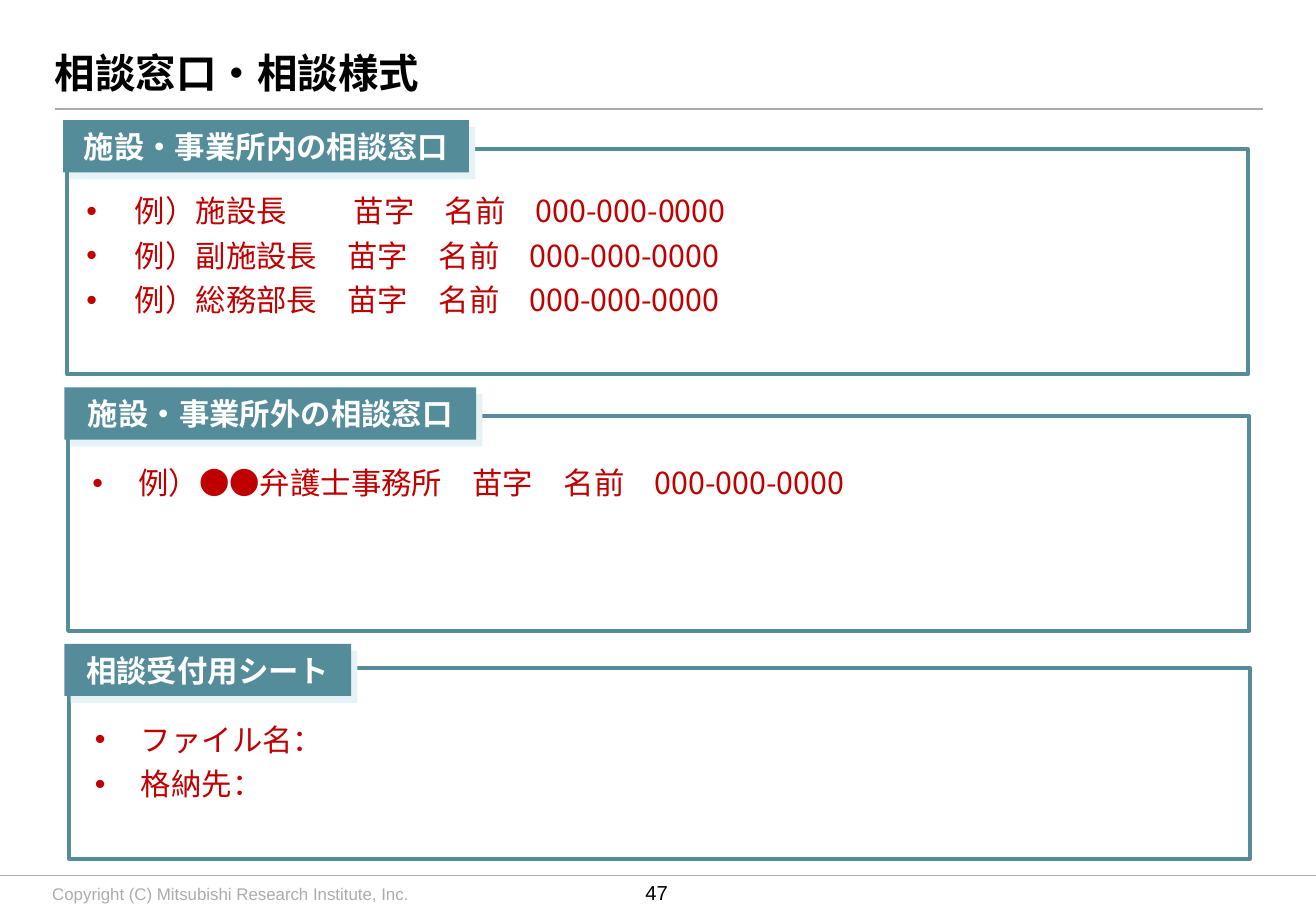
"""Build the slide of consultation contacts and forms."""
import pptx
import pptx.dml.color
import pptx.enum.shapes
import pptx.enum.text
import pptx.oxml.ns
import pptx.util
from lxml import etree

WIDTH, HEIGHT = pptx.util.Inches(10.83), pptx.util.Inches(7.5)
TEAL, PALE, RED, GREY, WHITE, BLACK = "558C99", "E5F3F6", "C00000", "ACACAC", "FFFFFF", "000000"
JAPANESE, LATIN = "Noto Sans CJK JP", "Arial"

TITLE = "相談窓口・相談様式"
COPYRIGHT = "Copyright (C) Mitsubishi Research Institute, Inc."
PAGE = "47"
RULES = [(0, 96.13, 100, 0.75), (4.16, 12, 95.94, 1)]
LABEL_HEIGHT = 5.73
SHADOW_SHIFT = (0.48, 0.75)
NAME_TAB = 2.2

SECTIONS = [
    {"heading": "施設・事業所内の相談窓口",
     "label": (4.8, 13.2, 30.84), "frame": (5.08, 16.4, 89.75, 24.67),
     "list": (6.56, 20.67, 49.58, 14), "hang": 0.4,
     "entries": ["例）施設長\t苗字　名前　000-000-0000",
                 "例）副施設長　苗字　名前　000-000-0000",
                 "例）総務部長　苗字　名前　000-000-0000"]},
    {"heading": "施設・事業所外の相談窓口",
     "label": (4.89, 42.53, 31.3), "frame": (5.17, 45.67, 89.75, 23.6),
     "list": (6.83, 50.53, 79.22, 4), "hang": 0.38,
     "entries": ["例）●●弁護士事務所　苗字　名前　000-000-0000"]},
    {"heading": "相談受付用シート",
     "label": (4.89, 70.67, 21.79), "frame": (5.26, 73.33, 89.75, 20.93),
     "list": (7.02, 78.67, 49.58, 9.07), "hang": 0.38,
     "entries": ["ファイル名：", "格納先："]},
]


def rgb(value):
    """Return a colour from its hex string."""
    return pptx.dml.color.RGBColor.from_string(value)


def place(left, top, width, height):
    """Turn percentages of the slide into lengths."""
    return (round(WIDTH * left / 100), round(HEIGHT * top / 100),
            round(WIDTH * width / 100), round(HEIGHT * height / 100))


def child(parent, tag, **attributes):
    """Append a drawing element to a parent."""
    return etree.SubElement(parent, pptx.oxml.ns.qn(tag), attributes)


def style(paragraph, size, colour, font=JAPANESE, bold=False):
    """Format every run of a paragraph."""
    for run in paragraph.runs:
        run.font.size = pptx.util.Pt(size)
        run.font.bold = bold
        run.font.name = font
        run.font.color.rgb = rgb(colour)
        child(run.font._element, "a:ea", typeface=font)


def prepare(frame, insets=(0, 0, 0, 0), middle=True):
    """Set the wrapping, margins and anchor of a text frame."""
    frame.word_wrap = True
    margins = [pptx.util.Inches(inset) for inset in insets]
    frame.margin_left, frame.margin_top, frame.margin_right, frame.margin_bottom = margins
    anchors = pptx.enum.text.MSO_ANCHOR
    frame.vertical_anchor = anchors.MIDDLE if middle else anchors.TOP


def add_rectangle(shapes, box, fill, outline=None):
    """Add a flat rectangle with an optional outline."""
    rectangle = shapes.add_shape(pptx.enum.shapes.MSO_SHAPE.RECTANGLE, *place(*box))
    rectangle.shadow.inherit = False
    rectangle.fill.solid()
    rectangle.fill.fore_color.rgb = rgb(fill)
    if outline:
        rectangle.line.color.rgb = rgb(outline)
        rectangle.line.width = pptx.util.Pt(2.25)
    else:
        rectangle.line.fill.background()
    return rectangle


def add_line_of_text(slide, text, box, size, colour, font, bold=False,
                     insets=(0, 0, 0, 0), centred=False):
    """Add a single line of text centred vertically in its box."""
    frame = slide.shapes.add_textbox(*place(*box)).text_frame
    prepare(frame, insets)
    frame.text = text
    if centred:
        frame.paragraphs[0].alignment = pptx.enum.text.PP_ALIGN.CENTER
    style(frame.paragraphs[0], size, colour, font, bold)


def add_rule(slide, left, top, right, weight):
    """Add a thin horizontal rule."""
    x, y, end, _ = place(left, top, right, 0)
    rule = slide.shapes.add_connector(pptx.enum.shapes.MSO_CONNECTOR.STRAIGHT, x, y, end, y)
    rule.line.color.rgb = rgb(GREY)
    rule.line.width = pptx.util.Pt(weight)
    child(rule._element.spPr, "a:effectLst")


def add_entries(slide, section):
    """Add the bulleted entries of a section."""
    frame = slide.shapes.add_textbox(*place(*section["list"])).text_frame
    prepare(frame, middle=False)
    frame.text = "\n".join(section["entries"])
    for index, paragraph in enumerate(frame.paragraphs):
        properties = paragraph._p.get_or_add_pPr()
        properties.set("marL", str(pptx.util.Inches(0.4)))
        properties.set("indent", str(-pptx.util.Inches(section["hang"])))
        child(properties, "a:buFont", typeface=LATIN)
        child(properties, "a:buChar", char="•")
        tabs = child(properties, "a:tabLst")
        child(tabs, "a:tab", pos=str(pptx.util.Inches(NAME_TAB)), algn="l")
        paragraph.line_spacing = pptx.util.Pt(24)
        paragraph.space_before = pptx.util.Pt(2.4 if index else 0)
        style(paragraph, 18, RED)


def add_section(slide, section):
    """Add a framed section with its heading and entries."""
    left, top, width = section["label"]
    shift_x, shift_y = SHADOW_SHIFT
    panel = slide.shapes.add_group_shape().shapes
    add_rectangle(panel, section["frame"], WHITE, TEAL)
    add_rectangle(panel, (left + shift_x, top + shift_y, width, LABEL_HEIGHT), PALE)
    label = add_rectangle(panel, (left, top, width, LABEL_HEIGHT), TEAL)
    prepare(label.text_frame)
    label.text_frame.text = section["heading"]
    heading = label.text_frame.paragraphs[0]
    heading.alignment = pptx.enum.text.PP_ALIGN.CENTER
    style(heading, 18, WHITE, bold=True)
    add_entries(slide, section)


def main():
    """Build and save the slide."""
    deck = pptx.Presentation()
    deck.slide_width, deck.slide_height = WIDTH, HEIGHT
    slide = deck.slides.add_slide(deck.slide_layouts[6])
    for rule in RULES:
        add_rule(slide, *rule)
    add_line_of_text(slide, COPYRIGHT, (3.97, 96.93, 46.17, 2.27), 10, GREY, LATIN)
    add_line_of_text(slide, PAGE, (47.55, 96.13, 4.71, 3.73), 12, BLACK, LATIN, centred=True)
    add_line_of_text(slide, TITLE, (4.16, 3.87, 91.78, 8.13), 24, BLACK, JAPANESE,
                     bold=True, insets=(0, 0.05, 0.1, 0.05))
    for section in SECTIONS:
        add_section(slide, section)
    deck.save("out.pptx")


if __name__ == "__main__":
    main()
